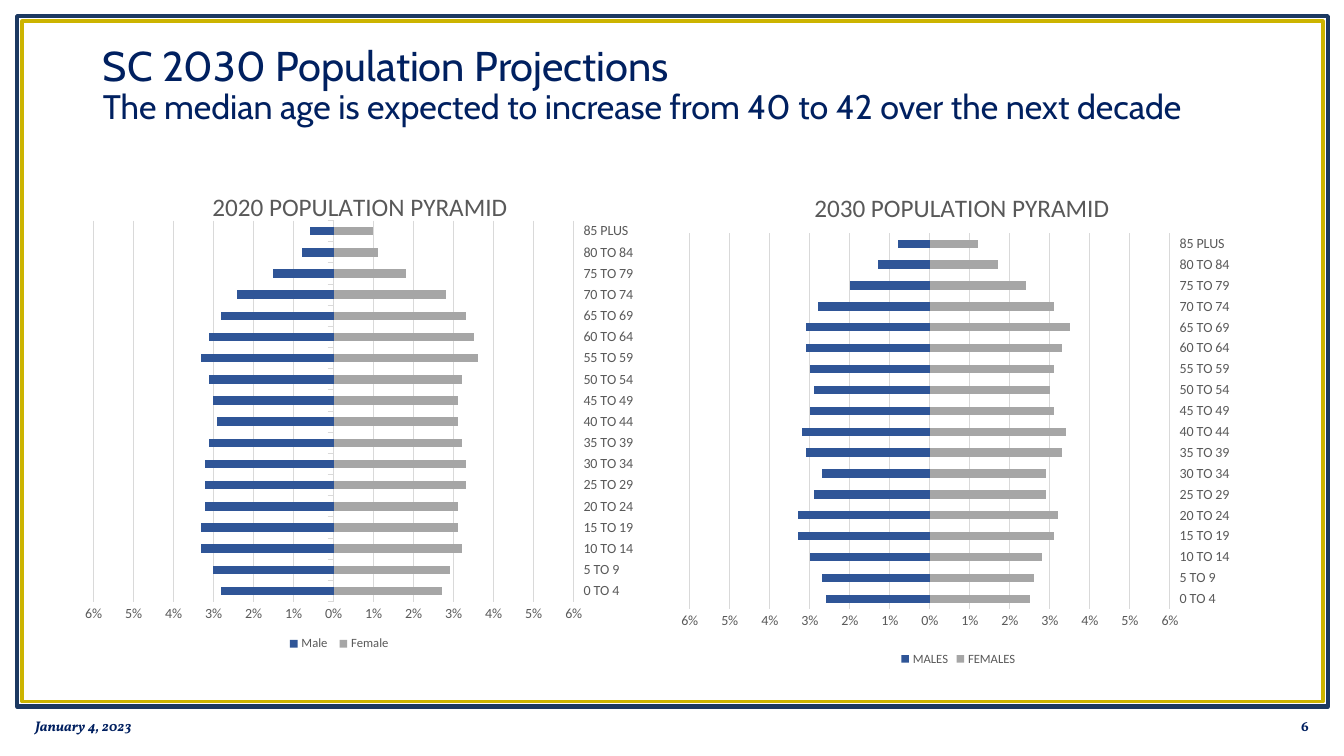
from lxml.etree import SubElement
from pptx import Presentation
from pptx.chart.data import CategoryChartData
from pptx.dml.color import RGBColor
from pptx.enum.chart import (XL_CHART_TYPE, XL_LEGEND_POSITION, XL_TICK_LABEL_POSITION,
                             XL_TICK_MARK)
from pptx.enum.shapes import MSO_SHAPE
from pptx.enum.text import MSO_ANCHOR, MSO_AUTO_SIZE, PP_ALIGN
from pptx.oxml.ns import qn
from pptx.util import Inches, Pt

NAVY = RGBColor(0x00, 0x20, 0x60)
FRAME_BLUE = RGBColor(0x1C, 0x39, 0x61)
FRAME_GOLD = RGBColor(0xCC, 0xB4, 0x00)
MALE_BLUE = RGBColor(0x2F, 0x55, 0x97)
FEMALE_GREY = RGBColor(0xA6, 0xA6, 0xA6)
LABEL_GREY = RGBColor(0x59, 0x59, 0x59)
GRID_GREY = RGBColor(0xD9, 0xD9, 0xD9)

AGE_GROUPS = [f"{age} TO {age + 4}" for age in range(0, 85, 5)] + ["85 PLUS"]

# Shares of the population in tenths of a percent, youngest group first
MALES_2020 = [28, 30, 33, 33, 32, 32, 32, 31, 29, 30, 31, 33, 31, 28, 24, 15, 8, 6]
FEMALES_2020 = [27, 29, 32, 31, 31, 33, 33, 32, 31, 31, 32, 36, 35, 33, 28, 18, 11, 10]
MALES_2030 = [26, 27, 30, 33, 33, 29, 27, 31, 32, 30, 29, 30, 31, 31, 28, 20, 13, 8]
FEMALES_2030 = [25, 26, 28, 31, 32, 29, 29, 33, 34, 31, 30, 31, 33, 35, 31, 24, 17, 12]


def place_in_chart(part, index, inner=False, **fractions):
    """Give a chart part a manual layout in fractions of the chart area."""
    for old in part.findall(qn("c:layout")):
        part.remove(old)
    layout = part.makeelement(qn("c:layout"))
    part.insert(index, layout)
    manual = SubElement(layout, qn("c:manualLayout"))
    if inner:
        SubElement(manual, qn("c:layoutTarget"), val="inner")
    for mode in ("xMode", "yMode"):
        SubElement(manual, qn(f"c:{mode}"), val="edge")
    for name, fraction in fractions.items():
        SubElement(manual, qn(f"c:{name}"), val=str(fraction))


class ProjectionSlide:
    heading_font = "Cabin"
    footer_font = "Vollkorn"
    chart_font = "Calibri"

    def __init__(self, deck):
        self.slide = deck.slides.add_slide(deck.slide_layouts[5])
        self.shapes = self.slide.shapes

    def frame(self, left, top, width, height, color, weight):
        border = self.shapes.add_shape(MSO_SHAPE.RECTANGLE, Inches(left), Inches(top),
                                       Inches(width), Inches(height))
        border.shadow.inherit = False
        border.fill.background()
        border.line.color.rgb = color
        border.line.width = Pt(weight)

    def run(self, paragraph, text, font, size, bold=False, italic=False):
        run = paragraph.add_run()
        run.text = text
        run.font.name = font
        run.font.size = Pt(size)
        run.font.bold = bold
        run.font.italic = italic
        run.font.color.rgb = NAVY

    def title(self, heading, message):
        title = self.shapes.title
        title.left, title.top = Inches(0.92), Inches(0.4)
        title.width, title.height = Inches(11.5), Inches(1.1)
        frame = title.text_frame
        frame.word_wrap = True
        frame.auto_size = MSO_AUTO_SIZE.NONE
        frame.vertical_anchor = MSO_ANCHOR.TOP
        paragraph = frame.paragraphs[0]
        paragraph.alignment = PP_ALIGN.LEFT
        paragraph.line_spacing = 0.9
        self.run(paragraph, heading, self.heading_font, 29.7)
        paragraph.add_line_break()
        self.run(paragraph, message, self.heading_font, 24.3)

    def footer(self, left, text, alignment, italic=False):
        box = self.shapes.add_textbox(Inches(left), Inches(7), Inches(3), Inches(0.4))
        frame = box.text_frame
        frame.word_wrap = True
        frame.vertical_anchor = MSO_ANCHOR.MIDDLE
        paragraph = frame.paragraphs[0]
        paragraph.alignment = alignment
        self.run(paragraph, text, self.footer_font, 10, bold=True, italic=italic)

    def chart_text(self, font, size):
        font.name = self.chart_font
        font.size = Pt(size)
        font.bold = False
        font.color.rgb = LABEL_GREY

    def pyramid(self, left, top, height, heading, series, plot_area, tick_mark):
        data = CategoryChartData(number_format="0%;0%")
        data.categories = AGE_GROUPS
        (male_name, males), (female_name, females) = series
        data.add_series(male_name, [-share / 1000 for share in males])
        data.add_series(female_name, [share / 1000 for share in females])
        chart = self.shapes.add_chart(XL_CHART_TYPE.BAR_STACKED, Inches(left), Inches(top),
                                      Inches(5.67), Inches(height), data).chart
        self.chart_text(chart.font, 10)

        chart.has_title = True
        caption = chart.chart_title.text_frame.paragraphs[0].add_run()
        caption.text = heading
        self.chart_text(caption.font, 18)
        place_in_chart(chart.chart_title._element, 1, x=0.24, y=0.047)

        bars = chart.plots[0]
        bars.gap_width = 150
        bars.overlap = 100
        bars.vary_by_categories = False
        for sex, color in zip(bars.series, (MALE_BLUE, FEMALE_GREY)):
            sex.invert_if_negative = False
            sex.format.fill.solid()
            sex.format.fill.fore_color.rgb = color
        place_in_chart(chart._chartSpace.chart.plotArea, 0, inner=True, **plot_area)

        ages = chart.category_axis
        ages.tick_label_position = XL_TICK_LABEL_POSITION.HIGH
        ages.major_tick_mark = tick_mark
        ages.minor_tick_mark = XL_TICK_MARK.NONE
        ages.format.line.color.rgb = GRID_GREY
        ages.format.line.width = Pt(0.75)

        shares = chart.value_axis
        shares.minimum_scale, shares.maximum_scale = -0.06, 0.06
        shares.major_unit = 0.01
        shares.major_tick_mark = shares.minor_tick_mark = XL_TICK_MARK.NONE
        shares.tick_labels.number_format = "0%;0%"
        shares.tick_labels.number_format_is_linked = False
        shares.format.line.fill.background()
        shares.major_gridlines.format.line.color.rgb = GRID_GREY
        shares.major_gridlines.format.line.width = Pt(0.75)
        for axis in (ages, shares):
            self.chart_text(axis.tick_labels.font, 10)

        chart.has_legend = True
        chart.legend.position = XL_LEGEND_POSITION.BOTTOM
        chart.legend.include_in_layout = False
        self.chart_text(chart.legend.font, 9)
        return chart


def main():
    deck = Presentation()
    deck.slide_width, deck.slide_height = Inches(13.33), Inches(7.5)
    page = ProjectionSlide(deck)
    page.frame(0.17, 0.16, 13, 6.85, FRAME_BLUE, 3)
    page.frame(0.22, 0.21, 12.9, 6.75, FRAME_GOLD, 2.5)
    page.title("SC 2030 Population Projections",
               "The median age is expected to increase from 40 to 42 over the next decade")
    page.footer(0.25, "January 4, 2023", PP_ALIGN.LEFT, italic=True)
    page.footer(10.08, "6", PP_ALIGN.RIGHT)
    page.pyramid(6.67, 1.61, 5.04, "2030 POPULATION PYRAMID",
                 [("MALES", MALES_2030), ("FEMALES", FEMALES_2030)],
                 {"x": 0.03, "y": 0.14, "w": 0.84, "h": 0.74}, XL_TICK_MARK.NONE)
    pyramid_2020 = page.pyramid(0.7, 1.6, 4.91, "2020 POPULATION PYRAMID",
                                [("Male", MALES_2020), ("Female", FEMALES_2020)],
                                {"x": 0.04, "y": 0.12, "w": 0.84, "h": 0.77},
                                XL_TICK_MARK.OUTSIDE)
    place_in_chart(pyramid_2020.legend._element, 1, x=0.37, y=0.95, w=0.2, h=0.05)
    deck.save("out.pptx")


if __name__ == "__main__":
    main()
